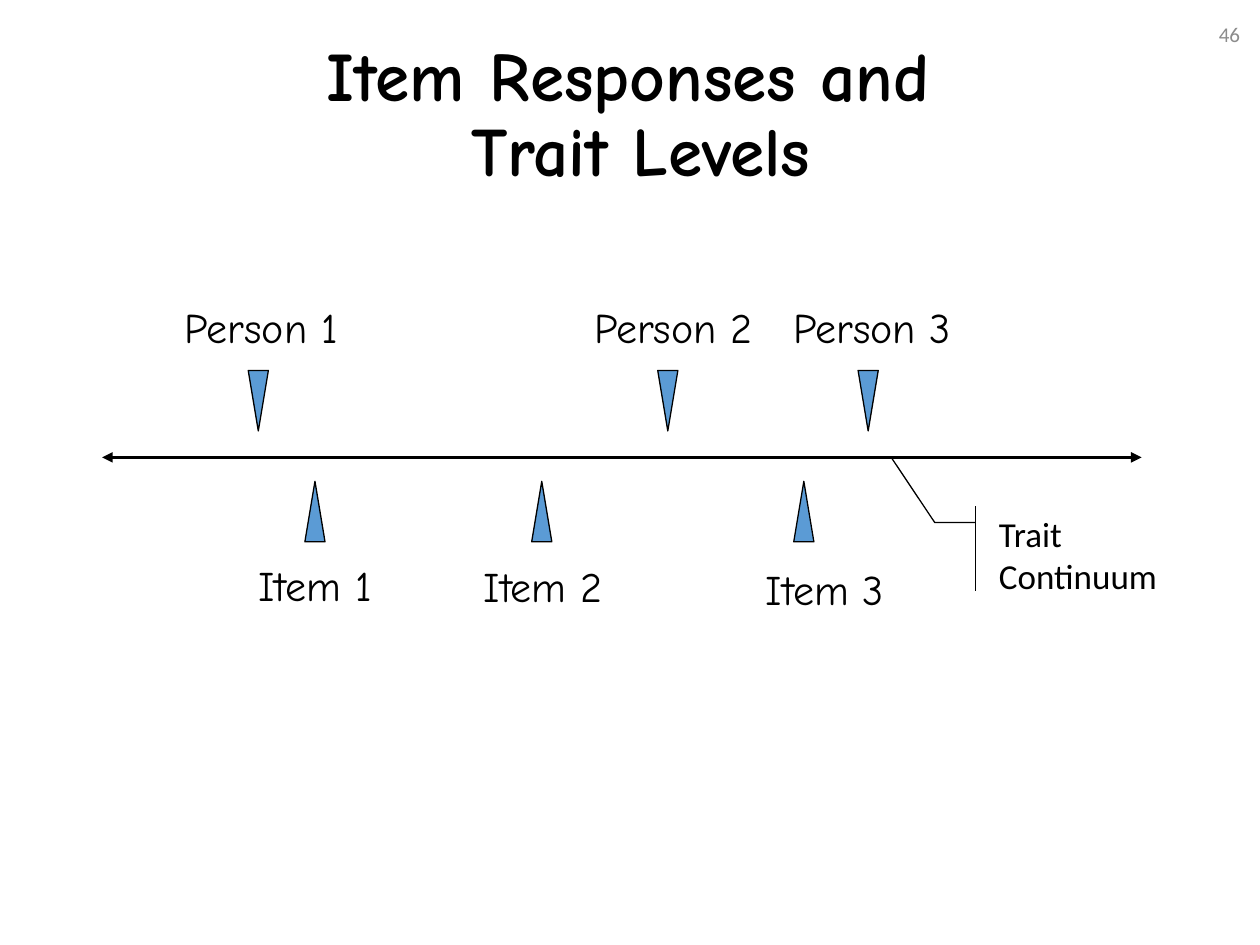
"""Build a slide that places persons and items on a trait continuum."""
from lxml.etree import SubElement
from pptx import Presentation
from pptx.dml.color import RGBColor
from pptx.enum.shapes import MSO_CONNECTOR, MSO_SHAPE
from pptx.enum.text import MSO_ANCHOR, PP_ALIGN
from pptx.oxml.ns import qn
from pptx.util import Inches, Pt


def color(code):
    return RGBColor.from_string(code)


def write(shape, text, size, font, code="000000", align=PP_ALIGN.LEFT, anchor=MSO_ANCHOR.TOP):
    frame = shape.text_frame
    frame.text = text
    frame.word_wrap = True
    frame.vertical_anchor = anchor
    for par in frame.paragraphs:
        par.alignment = align
        for run in par.runs:
            run.font.size = Pt(size)
            run.font.name = font
            run.font.color.rgb = color(code)


deck = Presentation()
deck.slide_width = Inches(10)
deck.slide_height = Inches(7.5)
slide = deck.slides.add_slide(deck.slide_layouts[5])
shapes = slide.shapes

title = shapes.title
title.left, title.top = Inches(0.17), Inches(0.3)
title.width, title.height = Inches(9.83), Inches(1.25)
write(title, "Item Responses and \vTrait Levels", 39.6, "Comic Neue",
      align=PP_ALIGN.CENTER, anchor=MSO_ANCHOR.MIDDLE)
heading = title.text_frame.paragraphs[0]
heading.line_spacing = 0.9
for run in heading.runs:
    run.font.bold = True

axis = shapes.add_connector(MSO_CONNECTOR.STRAIGHT, Inches(0.81), Inches(3.63),
                            Inches(9.06), Inches(3.63))
axis.line.color.rgb = color("000000")
axis.line.width = Pt(2)
for end in ("a:headEnd", "a:tailEnd"):
    SubElement(axis.line._get_or_add_ln(), qn(end), type="triangle")
SubElement(axis._element.spPr, qn("a:effectLst"))

marks = [
    ("Person 1", 1.97, 2.94, 180, 1.37, 2.34, 1.6),
    ("Person 2", 5.22, 2.94, 180, 4.62, 2.34, 1.6),
    ("Person 3", 6.81, 2.94, 180, 6.2, 2.34, 1.6),
    ("Item 1", 2.42, 3.82, 0, 1.95, 4.39, 1.34),
    ("Item 2", 4.22, 3.82, 0, 3.74, 4.4, 1.34),
    ("Item 3", 6.3, 3.82, 0, 5.98, 4.42, 1.34),
]
for name, left, top, turn, x, y, width in marks:
    wedge = shapes.add_shape(MSO_SHAPE.ISOSCELES_TRIANGLE, Inches(left), Inches(top),
                             Inches(0.16), Inches(0.48))
    wedge.rotation = turn
    wedge.shadow.inherit = False
    wedge.fill.solid()
    wedge.fill.fore_color.rgb = color("5B9BD5")
    wedge.line.color.rgb = color("000000")
    wedge.line.width = Pt(0.75)
    label = shapes.add_textbox(Inches(x), Inches(y), Inches(width), Inches(0.51))
    write(label, name, 24, "Comic Neue")

note = shapes.add_shape(MSO_SHAPE.LINE_CALLOUT_2_ACCENT_BAR, Inches(7.83), Inches(4.02),
                        Inches(1.79), Inches(0.67))
for i, value in enumerate((0.19, -0.05, 0.19, -0.23, -0.57, -0.42)):
    note.adjustments[i] = value
note.shadow.inherit = False
note.fill.background()
note.line.color.rgb = color("000000")
note.line.width = Pt(0.75)
write(note, "Trait\nContinuum", 20, "Calibri")

number = shapes.add_textbox(Inches(9.39), Inches(0.07), Inches(0.55), Inches(0.4))
write(number, "46", 12, "Calibri", "8C8C8C", PP_ALIGN.RIGHT, MSO_ANCHOR.MIDDLE)

deck.save("out.pptx")
